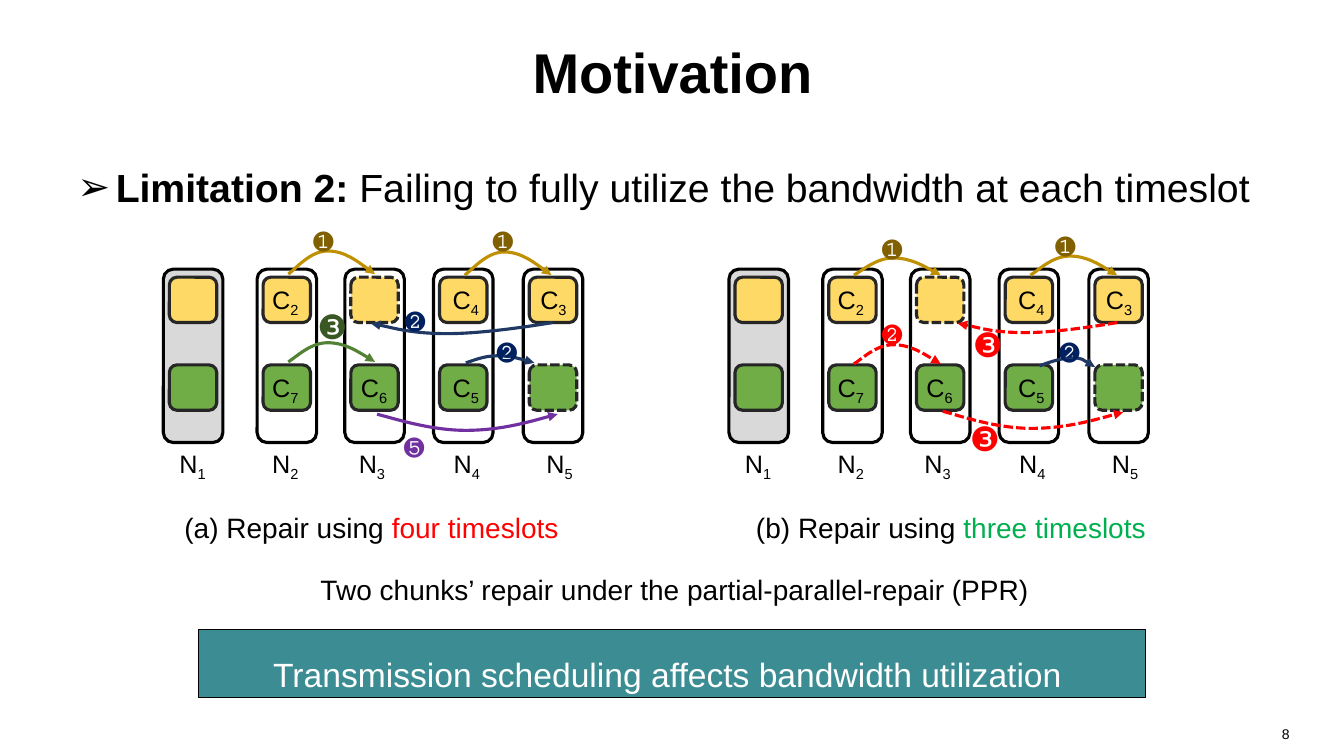
import lxml.etree
import pptx
import pptx.dml.color
import pptx.enum.dml
import pptx.enum.shapes
import pptx.enum.text
import pptx.oxml.ns
import pptx.util

Inches = pptx.util.Inches
qn = pptx.oxml.ns.qn
ALIGN = pptx.enum.text.PP_ALIGN
SHAPE = pptx.enum.shapes.MSO_SHAPE

BLACK, WHITE, RED = "000000", "FFFFFF", "FF0000"
YELLOW, GREEN, GREY, CHARCOAL = "FFD966", "70AD47", "D9D9D9", "262626"
GOLD, NAVY, PURPLE = "BF9000", "203864", "7030A0"
BROWN, MIDNIGHT = "806000", "002060"
BADGE_FONT = "Courier New"


def color(hex_string):
    return pptx.dml.color.RGBColor.from_string(hex_string)


class SlideBuilder:
    """Holds the style and the slide being filled."""

    font = "Arial"
    outline = 2.25

    def __init__(self, slide):
        self.slide = slide

    def add_runs(self, paragraph, runs, size, align=None):
        """Each run is (text, colour, extras); extras may hold bold, font, baseline."""
        paragraph.alignment = align
        for text, hex_string, extras in runs:
            run = paragraph.add_run()
            run.text = text
            run.font.name = extras.get("font", self.font)
            run.font.size = pptx.util.Pt(size)
            run.font.bold = extras.get("bold", False)
            run.font.color.rgb = color(hex_string)
            if "baseline" in extras:
                run.font._element.set("baseline", str(extras["baseline"]))

    def title(self, text, left, top, width, height):
        shape = self.slide.shapes.title
        shape.left, shape.top = Inches(left), Inches(top)
        shape.width, shape.height = Inches(width), Inches(height)
        shape.text_frame.vertical_anchor = pptx.enum.text.MSO_ANCHOR.MIDDLE
        self.add_runs(shape.text_frame.paragraphs[0], [(text, BLACK, {"bold": True})],
                      40, ALIGN.CENTER)

    def text(self, runs, size, left, top, width, height, align=None, wrap=False):
        box = self.slide.shapes.add_textbox(
            Inches(left), Inches(top), Inches(width), Inches(height))
        frame = box.text_frame
        frame.word_wrap = wrap
        if not wrap:
            frame.auto_size = pptx.enum.text.MSO_AUTO_SIZE.SHAPE_TO_FIT_TEXT
        self.add_runs(frame.paragraphs[0], runs, size, align)
        return frame.paragraphs[0]

    def bullet(self, runs, size, left, top, width, height):
        paragraph = self.text(runs, size, left, top, width, height, wrap=True)
        properties = paragraph._element.get_or_add_pPr()
        properties.set("marL", str(Inches(0.38)))
        properties.set("indent", str(Inches(-0.38)))
        lxml.etree.SubElement(properties, qn("a:buFont")).set("typeface", self.font)
        lxml.etree.SubElement(properties, qn("a:buChar")).set("char", "➢")

    def subscripted(self, letter, index, left, top):
        runs = [(letter, BLACK, {}), (str(index), BLACK, {"baseline": -25000})]
        self.text(runs, 18, left, top, 0.48, 0.4)

    def badge(self, symbol, hex_string, font, left, top):
        self.text([(symbol, hex_string, {"font": font})], 24, left, top, 0.47, 0.5)

    def style_line(self, shape, hex_string, width, dashed):
        shape.shadow.inherit = False
        shape.line.color.rgb = color(hex_string)
        shape.line.width = pptx.util.Pt(width)
        if dashed:
            shape.line.dash_style = pptx.enum.dml.MSO_LINE.SQUARE_DOT

    def box(self, kind, fill, line, left, top, width, height,
            line_width=outline, dashed=False):
        shape = self.slide.shapes.add_shape(
            kind, Inches(left), Inches(top), Inches(width), Inches(height))
        shape.fill.solid()
        shape.fill.fore_color.rgb = color(fill)
        self.style_line(shape, line, line_width, dashed)
        return shape

    def arc(self, hex_string, start, apex, end, dashed=False):
        """Two Bezier curves that meet at the apex and end in an arrowhead."""
        span = end[0] - start[0]
        points = [
            (start[0] + 0.09 * span, start[1] + 0.25 * (apex[1] - start[1])),
            (apex[0] - 0.2 * span, apex[1]),
            apex,
            (apex[0] + 0.2 * span, apex[1]),
            (end[0] - 0.09 * span, end[1] + 0.25 * (apex[1] - end[1])),
            end,
        ]
        builder = self.slide.shapes.build_freeform(
            Inches(start[0]), Inches(start[1]), scale=1.0)
        builder.add_line_segments(
            [(Inches(x), Inches(y)) for x, y in points], close=False)
        shape = builder.convert_to_shape()
        shape.fill.background()
        self.style_line(shape, hex_string, self.outline, dashed)

        # Every three straight segments become one cubic curve
        segments = list(shape._element.iter(qn("a:lnTo")))
        for first in range(0, len(segments), 3):
            curve = segments[first].makeelement(qn("a:cubicBezTo"))
            segments[first].addprevious(curve)
            for segment in segments[first:first + 3]:
                curve.append(segment[0])
                segment.getparent().remove(segment)
        line = shape.line._get_or_add_ln()
        lxml.etree.SubElement(line, qn("a:tailEnd")).set("type", "triangle")


# Node left, name left, chunk label left, upper chunk, lower chunk, repaired rows
NODES = [
    (1.62, 1.68, 0, None, None, ()),
    (2.55, 2.6, 2.6, 2, 7, ()),
    (3.42, 3.46, 3.48, None, 6, ("upper",)),
    (4.3, 4.4, 4.39, 4, 5, ()),
    (5.19, 5.32, 5.26, 3, None, ("lower",)),
]


def draw_nodes(builder, offset):
    for number, node in enumerate(NODES, 1):
        left, name_left, label_left, upper, lower, repaired = node
        builder.box(SHAPE.ROUNDED_RECTANGLE, GREY if number == 1 else WHITE, BLACK,
                    offset + left, 2.67, 0.59, 1.72)
        rows = [("upper", upper, YELLOW, 2.75), ("lower", lower, GREEN, 3.62)]
        for row, chunk, fill, top in rows:
            builder.box(SHAPE.ROUNDED_RECTANGLE, fill, CHARCOAL,
                        offset + left + 0.06, top, 0.47, 0.45, dashed=row in repaired)
            if chunk:
                builder.subscripted("C", chunk, offset + label_left, top + 0.02)
        builder.subscripted("N", number, offset + name_left, 4.4)


# Arcs: colour, start, apex, end, dashed. Badges: symbol, colour, font, left, top
PANELS = [
    (0, [
        (GOLD, (2.86, 2.72), (3.25, 2.49), (3.72, 2.72), False),
        (GOLD, (4.61, 2.73), (5, 2.5), (5.47, 2.73), False),
        (NAVY, (5.48, 3.2), (4.44, 3.31), (3.68, 3.21), False),
        (NAVY, (4.62, 3.6), (4.93, 3.53), (5.3, 3.6), False),
        ("548235", (2.86, 3.59), (3.25, 3.4), (3.72, 3.59), False),
        (PURPLE, (3.74, 4.11), (4.62, 4.27), (5.53, 4.11), False),
    ], [
        ("❶", BROWN, BADGE_FONT, 3.01, 2.08),
        ("❶", BROWN, BADGE_FONT, 4.79, 2.08),
        ("❷", MIDNIGHT, BADGE_FONT, 3.92, 2.88),
        ("❷", MIDNIGHT, BADGE_FONT, 4.83, 3.18),
        ("❺", PURPLE, BADGE_FONT, 3.91, 4.13),
        ("❸", "385723", "Arial", 3.05, 2.99),
    ]),
    (5.61, [
        (GOLD, (8.47, 2.73), (8.86, 2.56), (9.33, 2.73), False),
        (GOLD, (10.22, 2.73), (10.61, 2.54), (11.08, 2.73), False),
        (RED, (11.08, 3.2), (10.17, 3.3), (9.5, 3.21), True),
        (RED, (8.47, 3.61), (8.86, 3.42), (9.33, 3.61), True),
        (RED, (9.35, 4.08), (10.23, 4.25), (11.14, 4.09), True),
        (NAVY, (10.31, 3.63), (10.63, 3.55), (10.86, 3.64), False),
    ], [
        ("❶", BROWN, BADGE_FONT, 8.65, 2.16),
        ("❶", BROWN, BADGE_FONT, 10.37, 2.13),
        ("❸", RED, "Arial", 9.55, 3.16),
        ("❷", RED, BADGE_FONT, 8.65, 3.01),
        ("❸", RED, "Arial", 9.52, 4.1),
        ("❷", MIDNIGHT, BADGE_FONT, 10.41, 3.18),
    ]),
]


def main():
    presentation = pptx.Presentation()
    presentation.slide_width, presentation.slide_height = Inches(13.33), Inches(7.5)
    builder = SlideBuilder(presentation.slides.add_slide(presentation.slide_layouts[5]))

    # Heading and limitation
    builder.title("Motivation", 0.67, 0.08, 12, 1.25)
    builder.bullet([("Limitation 2: ", BLACK, {"bold": True}),
                    ("Failing to fully utilize the bandwidth at each timeslot", BLACK, {})],
                   28, 0.67, 1.57, 12, 0.6)

    # Repair diagrams
    for offset, arcs, badges in PANELS:
        draw_nodes(builder, offset)
        for arc in arcs:
            builder.arc(*arc)
        for badge in badges:
            builder.badge(*badge)

    # Captions
    builder.text([("(a) Repair using ", BLACK, {}), ("four timeslots", RED, {})],
                 20, 1.73, 5.02, 4.02, 0.44)
    builder.text([("(b) Repair using ", BLACK, {}), ("three timeslots", "00B050", {})],
                 20, 7.4, 5.02, 4.17, 0.44)
    builder.text([("Two chunks’ repair under the partial-parallel-repair (PPR)", BLACK, {})],
                 20, 3.08, 5.63, 7.28, 0.44)

    # Conclusion banner and page number
    banner = builder.box(SHAPE.RECTANGLE, "3C8C93", BLACK, 1.97, 6.25, 9.39, 0.67, 0.75)
    paragraph = banner.text_frame.paragraphs[0]
    paragraph.line_spacing = 1.5
    builder.add_runs(paragraph, [("Transmission scheduling affects bandwidth utilization ",
                                  WHITE, {})], 24, ALIGN.CENTER)
    builder.text([("8", BLACK, {})], 10, 9.78, 7.15, 3.11, 0.35, ALIGN.RIGHT, wrap=True)

    presentation.save("out.pptx")


if __name__ == "__main__":
    main()
